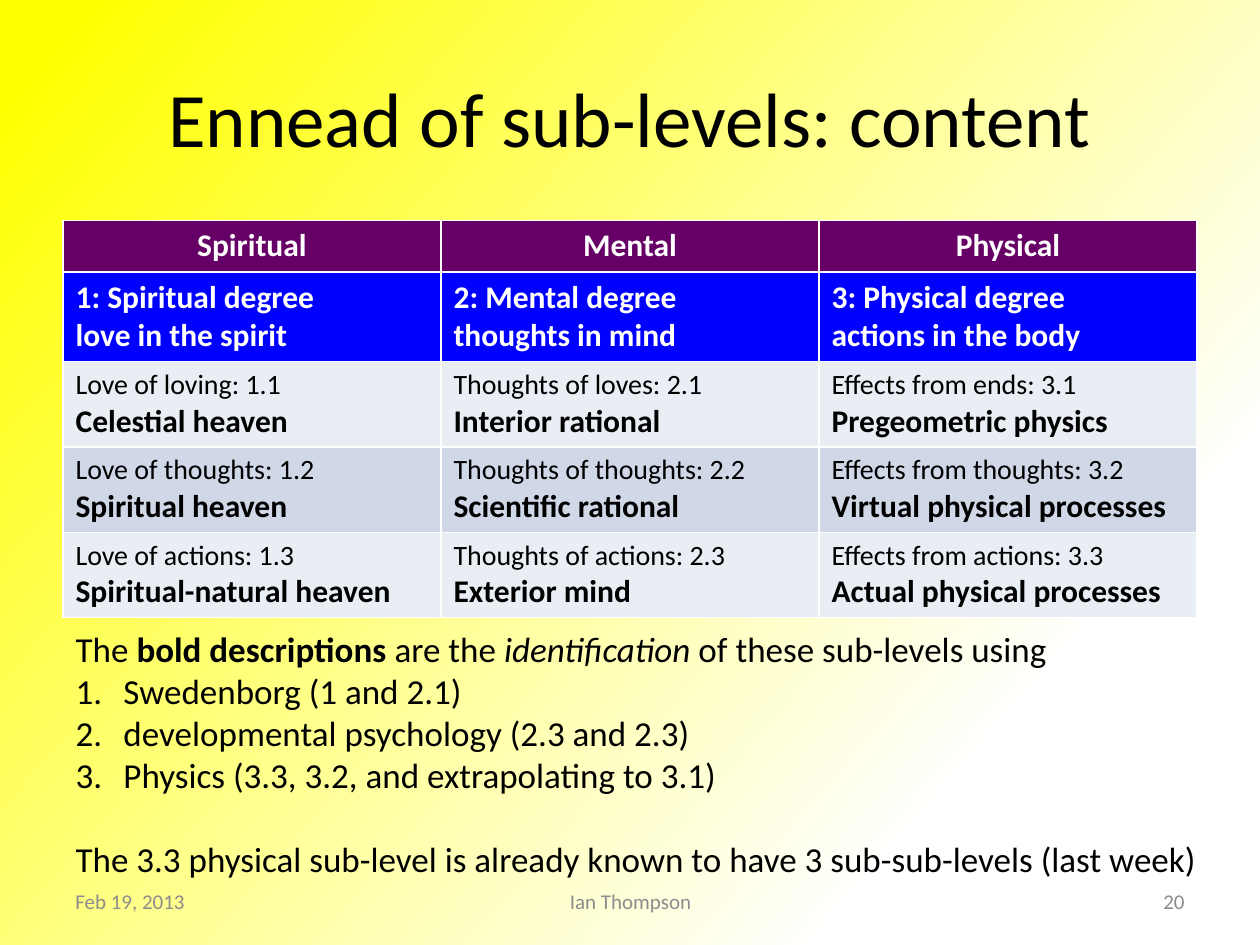
from lxml.etree import SubElement as Sub
from pptx import Presentation
from pptx.dml.color import RGBColor as RGB
from pptx.enum.text import MSO_ANCHOR as Anchor, PP_ALIGN as Align
from pptx.oxml.ns import qn
from pptx.util import Inches, Pt

TITLE = "Ennead of sub-levels: content"
HEADS = ["Spiritual", "Mental", "Physical"]
DEGREES = [
    "1: Spiritual degree\nlove in the spirit",
    "2: Mental degree\nthoughts in mind",
    "3: Physical degree\nactions in the body",
]
LEVELS = [
    ["Love of loving: 1.1\nCelestial heaven",
     "Thoughts of loves: 2.1\nInterior rational",
     "Effects from ends: 3.1\nPregeometric physics"],
    ["Love of thoughts: 1.2\nSpiritual heaven",
     "Thoughts of thoughts: 2.2\nScientific rational",
     "Effects from thoughts: 3.2\nVirtual physical processes"],
    ["Love of actions: 1.3\nSpiritual-natural heaven",
     "Thoughts of actions: 2.3\nExterior mind",
     "Effects from actions: 3.3\nActual physical processes"],
]
FILLS = ["660066", "0000FF", "E9EDF4", "D0D8E8", "E9EDF4"]
HEIGHTS = [0.41, 0.69, 0.67, 0.67, 0.67]
INTRO = [("The ", ""), ("bold descriptions ", "b"), ("are the ", ""),
         ("identification", "i"), (" of these sub-levels using", "")]
SOURCES = [
    "Swedenborg (1 and 2.1)",
    "developmental psychology (2.3 and 2.3)",
    "Physics (3.3, 3.2, and extrapolating to 3.1)",
]
CLOSING = "The 3.3 physical sub-level is already known to have 3 sub-sub-levels (last week)"
FOOTER = [
    ("Feb 19, 2013", 0.5, 2.33, Align.LEFT),
    ("Ian Thompson", 3.42, 3.17, Align.CENTER),
    ("20", 7.17, 2.33, Align.RIGHT),
]


def color(hue):
    return RGB.from_string(hue)


def style(para, size, hue="000000", bold=False, align=Align.LEFT):
    para.alignment = align
    for run in para.runs:
        font = run.font
        font.name, font.size, font.bold = "Calibri", Pt(size), bold
        font.color.rgb = color(hue)


def place(shape, left, top, width, height):
    shape.left, shape.top = Inches(left), Inches(top)
    shape.width, shape.height = Inches(width), Inches(height)


def paint(slide):
    fill = slide.background.fill
    fill.gradient()
    fill.gradient_angle = 360 - 41
    for stop, (pos, hue) in zip(fill.gradient_stops, [(0.04, "FFFF00"), (0.79, "FFFFFF")]):
        stop.position, stop.color.rgb = pos, color(hue)


def add_levels(slide):
    rows = [HEADS, DEGREES, *LEVELS]
    table = slide.shapes.add_table(
        len(rows), len(HEADS), Inches(0.5), Inches(1.75), Inches(9), Inches(sum(HEIGHTS))).table
    for r, texts in enumerate(rows):
        table.rows[r].height = Inches(HEIGHTS[r])
        for c, text in enumerate(texts):
            cell = table.cell(r, c)
            cell.fill.solid()
            cell.fill.fore_color.rgb = color(FILLS[r])
            cell.text_frame.text = text
            for n, para in enumerate(cell.text_frame.paragraphs):
                bold = r < 2 or n == 1
                style(para, 18 if bold else 16, "FFFFFF" if r < 2 else "000000", bold,
                      Align.CENTER if r == 0 else Align.LEFT)


def add_notes(body):
    place(body, 0.5, 4.93, 9.38, 2.12)
    frame = body.text_frame
    frame.text = "\n".join(["", *SOURCES, CLOSING])
    paras = frame.paragraphs
    for text, _ in INTRO:
        paras[0].add_run().text = text
    for n, para in enumerate(paras):
        style(para, 20)
        para.space_before = Pt(24 if para is paras[-1] else 0)
        listed = 1 <= n <= len(SOURCES)
        props = para._p.get_or_add_pPr()
        indent = Inches(0.38) if listed else 0
        props.set("marL", str(indent))
        props.set("indent", str(-indent))
        if listed:
            Sub(props, qn("a:buFont"), typeface="+mj-lt")
            Sub(props, qn("a:buAutoNum"), type="arabicPeriod")
        else:
            Sub(props, qn("a:buNone"))
    for run, (_, mark) in zip(paras[0].runs, INTRO):
        run.font.bold, run.font.italic = mark == "b", mark == "i"


def add_footer(slide):
    for text, left, width, align in FOOTER:
        box = slide.shapes.add_textbox(Inches(left), Inches(6.95), Inches(width), Inches(0.4))
        frame = box.text_frame
        frame.word_wrap, frame.vertical_anchor = True, Anchor.MIDDLE
        frame.text = text
        style(frame.paragraphs[0], 12, "8C8C8C", align=align)


def main():
    """Build the slide on the ennead of sub-levels."""
    deck = Presentation()
    deck.slide_width, deck.slide_height = Inches(10), Inches(7.5)
    slide = deck.slides.add_slide(deck.slide_layouts[1])
    paint(slide)
    title, body = slide.placeholders
    place(title, 0.5, 0.3, 9, 1.25)
    title.text_frame.text = TITLE
    style(title.text_frame.paragraphs[0], 44, align=Align.CENTER)
    add_levels(slide)
    add_footer(slide)
    add_notes(body)
    deck.save("out.pptx")


if __name__ == "__main__":
    main()
